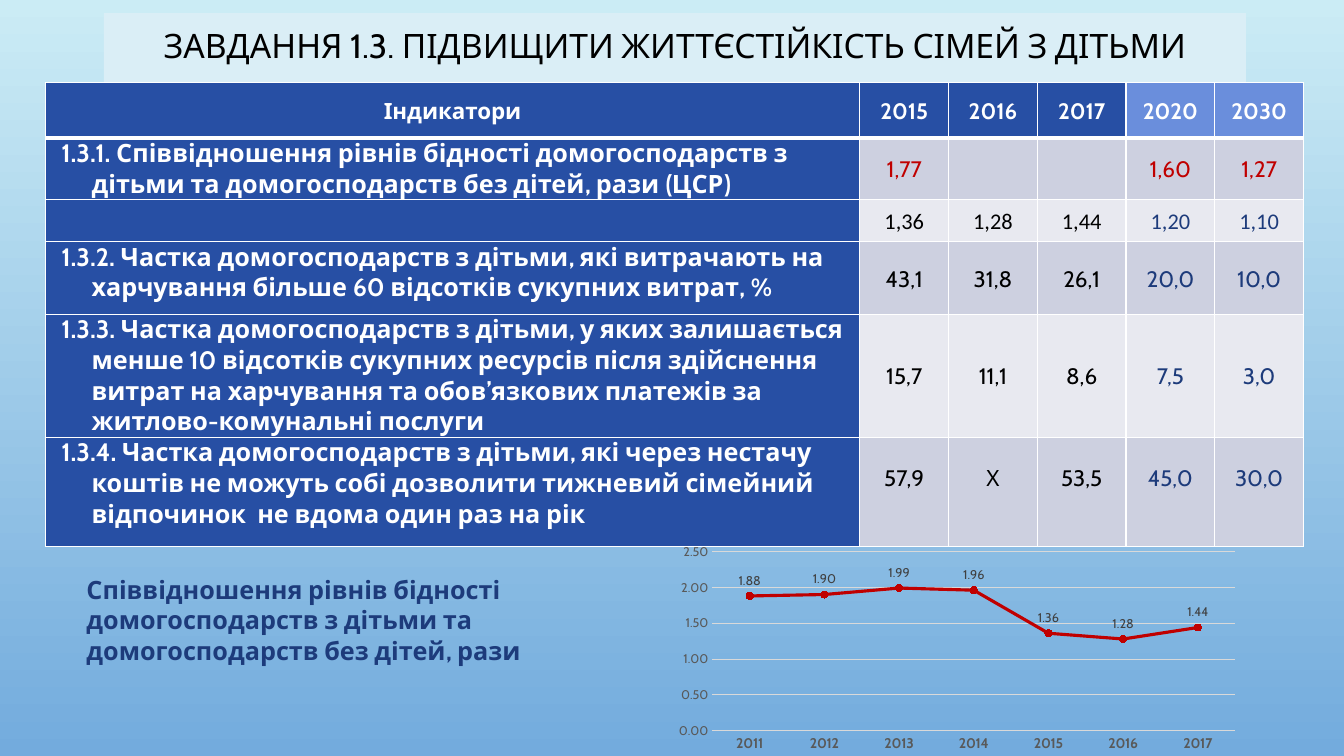
from lxml.etree import SubElement
from pptx import Presentation
from pptx.chart.data import CategoryChartData as ChartData
from pptx.dml.color import RGBColor as RGB
from pptx.enum.chart import XL_CHART_TYPE as Chart, XL_LABEL_POSITION as Spot
from pptx.enum.chart import XL_MARKER_STYLE as Mark, XL_TICK_MARK as Tick
from pptx.enum.shapes import MSO_SHAPE as Shape
from pptx.enum.text import MSO_ANCHOR as Anchor, PP_ALIGN as Align
from pptx.oxml.ns import qn
from pptx.util import Pt

WHITE = RGB(0xFF, 0xFF, 0xFF)
BLACK = RGB(0, 0, 0)
SKY = RGB(0xCB, 0xEC, 0xF5)
SEA = RGB(0x73, 0xAB, 0xDD)
ICE = RGB(0xDA, 0xEE, 0xF6)
BLUE = RGB(0x27, 0x4F, 0xA4)
LIGHT = RGB(0x6A, 0x8E, 0xDC)
NAVY = RGB(0x1D, 0x3B, 0x7B)
RED = RGB(0xC0, 0, 0)
BANDS = RGB(0xCD, 0xD0, 0xE0), RGB(0xE8, 0xE9, 0xF0)
GREY = RGB(0x59, 0x59, 0x59)
DARK = RGB(0x40, 0x40, 0x40)
PALE = RGB(0xD9, 0xD9, 0xD9)

HEAD = ["Індикатори", "2015", "2016", "2017", "2020", "2030"]
ROWS = [
    ["1.3.1. Співвідношення рівнів бідності домогосподарств з дітьми та "
     "домогосподарств без дітей, рази (ЦСР)", "1,77", "", "", "1,60", "1,27"],
    ["", "1,36", "1,28", "1,44", "1,20", "1,10"],
    ["1.3.2. Частка домогосподарств з дітьми, які витрачають на харчування "
     "більше 60 відсотків сукупних витрат, %",
     "43,1", "31,8", "26,1", "20,0", "10,0"],
    ["1.3.3. Частка домогосподарств з дітьми, у яких залишається менше 10 "
     "відсотків сукупних ресурсів після здійснення витрат на харчування та "
     "обов’язкових платежів за житлово-комунальні послуги",
     "15,7", "11,1", "8,6", "7,5", "3,0"],
    ["1.3.4. Частка домогосподарств з дітьми, які через нестачу коштів не "
     "можуть собі дозволити тижневий сімейний відпочинок  не вдома один раз "
     "на рік", "57,9", "Х", "53,5", "45,0", "30,0"],
]
WIDTHS = [581.8] + [63.4] * 5
HEIGHTS = [39.6, 41, 30.2, 51.8, 79.2, 77.8]
RATIOS = {"2011": 1.88, "2012": 1.90, "2013": 1.99, "2014": 1.96,
          "2015": 1.36, "2016": 1.28, "2017": 1.44}


def style(font, size, color, bold=False, face="Cabin"):
    font.name, font.size, font.bold = face, Pt(size), bold
    font.color.rgb = color


def write(frame, text, size=16, color=BLACK, bold=False, face="Cabin",
          align=Align.LEFT, gap=None, hang=None):
    """Put one paragraph in frame; hang is (left margin, first line indent)."""
    para = frame.paragraphs[0]
    para.alignment = align
    if gap:
        para.line_spacing = gap
    if hang:
        props = para._p.get_or_add_pPr()
        for key, size_pt in zip(("marL", "indent"), hang):
            props.set(key, str(Pt(size_pt)))
    run = para.add_run()
    run.text = text
    style(run.font, size, color, bold, face)


def edge(cell, **sides):
    """Draw white cell borders; each side is given a width in points."""
    props = cell._tc.get_or_add_tcPr()
    for side, width in sides.items():
        line = SubElement(props, qn("a:ln" + side), w=str(Pt(width)))
        fill = SubElement(line, qn("a:solidFill"))
        SubElement(fill, qn("a:srgbClr"), val=str(WHITE))


class Page:
    def __init__(self, deck):
        self.slide = deck.slides.add_slide(deck.slide_layouts[6])
        self.shapes = self.slide.shapes

    def back(self, *colors):
        fill = self.slide.background.fill
        fill.gradient()
        fill.gradient_angle = 270
        for stop, color in zip(fill.gradient_stops, colors):
            stop.color.rgb = color

    def title(self, text, box):
        rect = self.shapes.add_shape(Shape.RECTANGLE, *map(Pt, box))
        rect.shadow.inherit = False
        rect.fill.solid()
        rect.fill.fore_color.rgb = ICE
        rect.line.fill.background()
        frame = rect.text_frame
        frame.word_wrap = True
        frame.vertical_anchor = Anchor.MIDDLE
        write(frame, text, size=24, align=Align.CENTER, gap=0.9)

    def note(self, text, box):
        frame = self.shapes.add_textbox(*map(Pt, box)).text_frame
        frame.word_wrap = True
        write(frame, text, size=18, color=NAVY, bold=True)

    def table(self, rows, left, top):
        size = sum(WIDTHS), sum(HEIGHTS)
        table = self.shapes.add_table(
            len(rows), len(WIDTHS), *map(Pt, (left, top, *size))).table
        table.first_row = table.horz_banding = False
        for col, width in zip(table.columns, WIDTHS):
            col.width = Pt(width)
        for row, height in zip(table.rows, HEIGHTS):
            row.height = Pt(height)
        for r, row in enumerate(rows):
            for c, text in enumerate(row):
                self.cell(table.cell(r, c), r, c, text)

    def cell(self, cell, r, c, text):
        label = r > 0 and c == 0
        goal = c > 3
        cell.margin_left = cell.margin_right = Pt(5)
        cell.margin_top = cell.margin_bottom = 0
        if r == len(ROWS) and not label:
            cell.margin_bottom = Pt(21)
        cell.vertical_anchor = Anchor.TOP if label else Anchor.MIDDLE
        edge(cell, L=1, R=1, T=3 if r == 1 else 1, B=3 if r == 0 else 1)
        cell.fill.solid()
        if r == 0:
            fill = LIGHT if goal else BLUE
        else:
            fill = BLUE if label else BANDS[(r - 1) % 2]
        cell.fill.fore_color.rgb = fill
        if not text:
            return
        frame = cell.text_frame
        if label:
            write(frame, text, size=18, color=WHITE, bold=True,
                  hang=(28, -21.6))
            return
        if r == 0:
            color = WHITE
        elif r == 1:
            color = RED
        else:
            color = NAVY if goal else BLACK
        write(frame, text, color=color, bold=r == 0, align=Align.CENTER,
              face="Calibri" if r == 2 else "Cabin", gap=1.07)

    def chart(self, values, box):
        data = ChartData(number_format="0.00")
        data.categories = list(values)
        data.add_series("Series 1", list(values.values()))
        chart = self.shapes.add_chart(
            Chart.LINE_MARKERS, *map(Pt, box), data).chart
        chart.has_legend = chart.has_title = False
        style(chart.font, 10, BLACK)

        years, scale = chart.category_axis, chart.value_axis
        for axis in years, scale:
            axis.major_tick_mark = axis.minor_tick_mark = Tick.NONE
        style(years.tick_labels.font, 10, GREY, True)
        style(scale.tick_labels.font, 9, GREY)
        scale.minimum_scale, scale.maximum_scale = 0, 2.5
        scale.major_unit = 0.5
        scale.tick_labels.number_format = "0.00"
        scale.tick_labels.number_format_is_linked = False
        scale.format.line.fill.background()
        for line in years.format.line, scale.major_gridlines.format.line:
            line.color.rgb, line.width = PALE, Pt(0.75)

        plot = chart.plots[0]
        plot.vary_by_categories = False
        series = plot.series[0]
        series.smooth = False
        series.format.line.color.rgb = RED
        series.format.line.width = Pt(2.25)
        mark = series.marker
        mark.style, mark.size = Mark.CIRCLE, 5
        mark.format.fill.solid()
        mark.format.fill.fore_color.rgb = RED
        mark.format.line.color.rgb = RED
        tags = series.data_labels
        tags.show_value, tags.position = True, Spot.ABOVE
        tags.number_format, tags.number_format_is_linked = "0.00", False
        style(tags.font, 9, DARK)


def main():
    deck = Presentation()
    deck.slide_width, deck.slide_height = Pt(960), Pt(540)
    page = Page(deck)
    page.back(SKY, SEA)
    page.title("ЗАВДАННЯ 1.3. ПІДВИЩИТИ ЖИТТЄСТІЙКІСТЬ СІМЕЙ З ДІТЬМИ",
               (74.2, 9.4, 815.8, 49.7))
    page.table([HEAD] + ROWS, 32.4, 59)
    page.chart(RATIOS, (476.6, 385.2, 414, 154.8))
    page.note("Співвідношення рівнів бідності домогосподарств з дітьми та "
              "домогосподарств без дітей, рази", (54.7, 406.8, 427.7, 51))
    deck.save("out.pptx")


if __name__ == "__main__":
    main()
